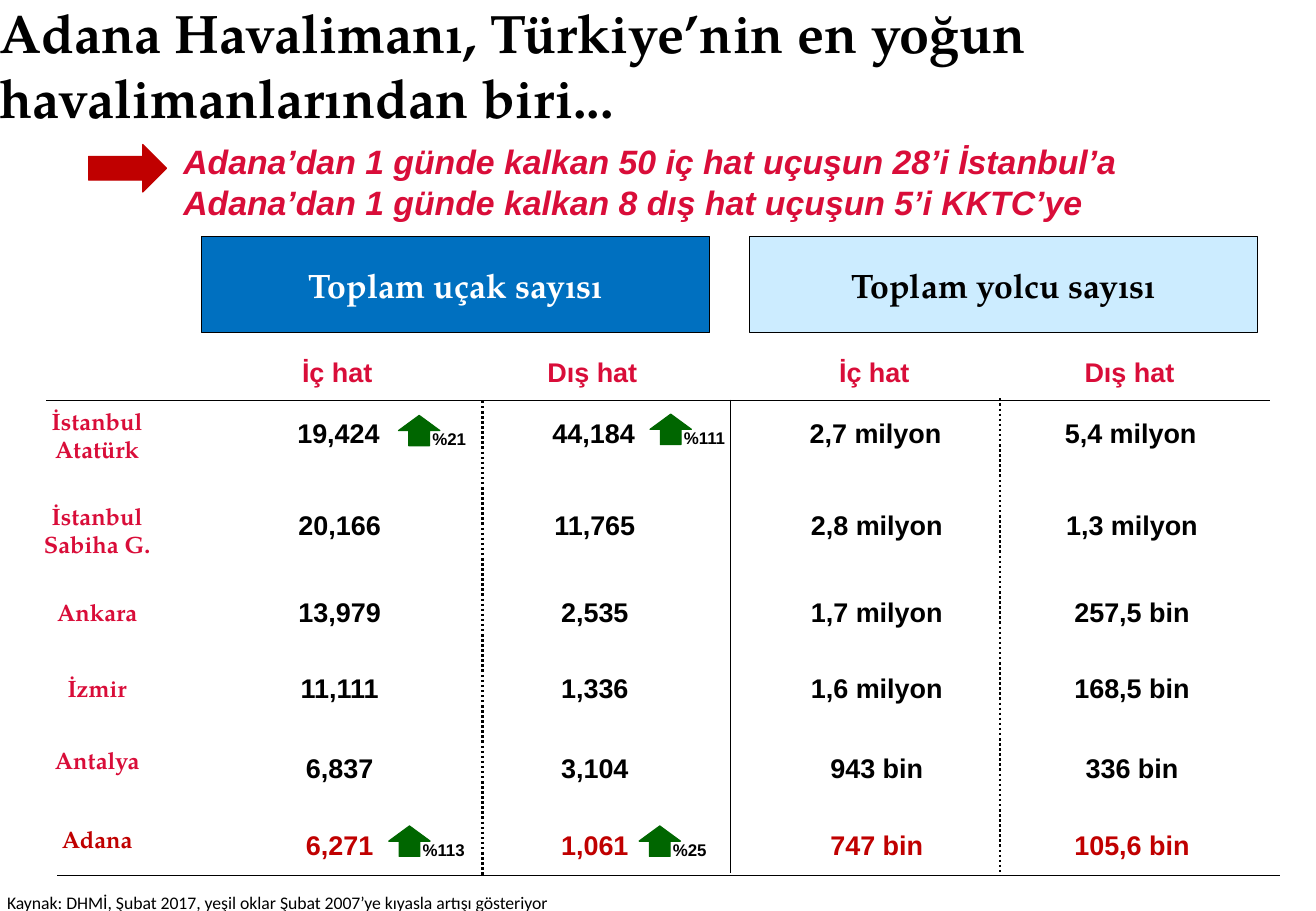
from dataclasses import dataclass

from lxml import etree
from pptx import Presentation
from pptx.dml.color import RGBColor
from pptx.enum.dml import MSO_LINE
from pptx.enum.shapes import MSO_CONNECTOR, MSO_SHAPE
from pptx.enum.text import MSO_ANCHOR, PP_ALIGN
from pptx.oxml.ns import qn
from pptx.util import Emu, Pt

PX = 9144  # one px is a hundredth of an inch
SLIDE_WIDTH, SLIDE_HEIGHT = 1083, 750

BLACK = RGBColor(0x00, 0x00, 0x00)
WHITE = RGBColor(0xFF, 0xFF, 0xFF)
CRIMSON = RGBColor(0xD9, 0x0D, 0x39)
DARK_RED = RGBColor(0xC0, 0x00, 0x00)
BLUE = RGBColor(0x00, 0x70, 0xC0)
PALE_BLUE = RGBColor(0xCC, 0xEC, 0xFF)
GREEN = RGBColor(0x00, 0x66, 0x00)

SERIF, SANS, SOURCE_FONT = "TeX Gyre Pagella", "Arial", "Calibri"

LEFT, CENTER = PP_ALIGN.LEFT, PP_ALIGN.CENTER
TOP, MIDDLE = MSO_ANCHOR.TOP, MSO_ANCHOR.MIDDLE
RECTANGLE = MSO_SHAPE.RECTANGLE
RIGHT_ARROW, UP_ARROW = MSO_SHAPE.RIGHT_ARROW, MSO_SHAPE.UP_ARROW
STRAIGHT = MSO_CONNECTOR.STRAIGHT
DOTTED = MSO_LINE.ROUND_DOT


@dataclass(frozen=True)
class Box:
    left: int
    top: int
    width: int
    height: int

    def emu(self) -> list[Emu]:
        return [Emu(n * PX) for n in (self.left, self.top, self.width, self.height)]


@dataclass(frozen=True)
class Style:
    font: str
    size: float
    color: RGBColor
    bold: bool = True
    italic: bool = False
    align: PP_ALIGN = CENTER


@dataclass(frozen=True)
class Airport:
    name: str
    label_top: int
    label_height: int
    value_top: int
    values: tuple[str, str, str, str]
    label_color: RGBColor = CRIMSON
    value_color: RGBColor = BLACK


@dataclass(frozen=True)
class Rule:
    x1: int
    y1: int
    x2: int
    y2: int
    dotted: bool = False


@dataclass(frozen=True)
class Increase:
    left: int
    top: int
    text: str


COLUMN_LEFTS = (175, 385, 617, 827)
COLUMN_WIDTH = 209
COLUMN_TITLES = ("İç hat", "Dış hat", "İç hat", "Dış hat")

GROUPS = (
    (166, "Toplam uçak sayısı", BLUE, WHITE),
    (617, "Toplam yolcu sayısı", PALE_BLUE, BLACK),
)

AIRPORTS = (
    Airport("İstanbul Atatürk", 330, 63, 338,
            ("19,424", "44,184", "2,7 milyon", "5,4 milyon")),
    Airport("İstanbul Sabiha G.", 408, 63, 414,
            ("20,166", "11,765", "2,8 milyon", "1,3 milyon")),
    Airport("Ankara", 487, 39, 485, ("13,979", "2,535", "1,7 milyon", "257,5 bin")),
    Airport("İzmir", 550, 39, 548, ("11,111", "1,336", "1,6 milyon", "168,5 bin")),
    Airport("Antalya", 609, 39, 614, ("6,837", "3,104", "943 bin", "336 bin")),
    Airport("Adana", 674, 39, 677, ("6,271", "1,061", "747 bin", "105,6 bin"),
            DARK_RED, DARK_RED),
)

RULES = (
    Rule(397, 330, 397, 721, dotted=True),
    Rule(601, 329, 601, 719),
    Rule(823, 328, 823, 720, dotted=True),
    Rule(38, 330, 1045, 330),
    Rule(47, 721, 1053, 721),
)

INCREASES = (
    Increase(328, 342, "%21"),
    Increase(535, 341, "%111"),
    Increase(320, 680, "%113"),
    Increase(526, 680, "%25"),
)


def write(shape, lines: list[str], style: Style, anchor=TOP) -> None:
    frame = shape.text_frame
    frame.word_wrap = True
    frame.vertical_anchor = anchor
    frame.text = "\n".join(lines)
    for paragraph in frame.paragraphs:
        paragraph.alignment = style.align
        font = paragraph.font
        font.name, font.size = style.font, Pt(style.size)
        font.bold, font.italic = style.bold, style.italic
        font.color.rgb = style.color


def add_text(slide, box: Box, lines: list[str], style: Style):
    shape = slide.shapes.add_textbox(*box.emu())
    write(shape, lines, style)
    return shape


def add_filled(slide, kind, box: Box, fill: RGBColor, outline: RGBColor):
    shape = slide.shapes.add_shape(kind, *box.emu())
    shape.shadow.inherit = False
    shape.fill.solid()
    shape.fill.fore_color.rgb = fill
    shape.line.color.rgb = outline
    shape.line.width = Pt(0.75)
    return shape


def add_rule(slide, rule: Rule) -> None:
    ends = [Emu(n * PX) for n in (rule.x1, rule.y1, rule.x2, rule.y2)]
    connector = slide.shapes.add_connector(STRAIGHT, *ends)
    connector.line.color.rgb = BLACK
    connector.line.width = Pt(1.5 if rule.dotted else 0.75)
    if rule.dotted:
        connector.line.dash_style = DOTTED
    etree.SubElement(connector._element.spPr, qn("a:effectLst"))


def add_airport(slide, airport: Airport) -> None:
    add_text(slide, Box(13, airport.label_top, 134, airport.label_height),
             [airport.name], Style(SERIF, 14, airport.label_color))
    for left, value in zip(COLUMN_LEFTS, airport.values):
        # The first row sits slightly left of the others
        shift = -1 if airport is AIRPORTS[0] else 0
        add_text(slide, Box(left + shift, airport.value_top, COLUMN_WIDTH, 37),
                 [value], Style(SANS, 16, airport.value_color))


def add_increase(slide, increase: Increase) -> None:
    add_filled(slide, UP_ARROW, Box(increase.left, increase.top, 34, 25), GREEN, GREEN)
    add_text(slide, Box(increase.left + 18, increase.top + 6, 66, 27),
             [increase.text], Style(SANS, 10, BLACK, align=LEFT))


def main() -> None:
    presentation = Presentation()
    presentation.slide_width = Emu(SLIDE_WIDTH * PX)
    presentation.slide_height = Emu(SLIDE_HEIGHT * PX)
    slide = presentation.slides.add_slide(presentation.slide_layouts[6])

    # Title
    title = add_text(slide, Box(0, 0, SLIDE_WIDTH, 92),
                     ["Adana Havalimanı, Türkiye’nin en yoğun havalimanlarından biri..."],
                     Style(SERIF, 32, BLACK, align=LEFT))
    frame = title.text_frame
    frame.margin_left = frame.margin_top = frame.margin_right = frame.margin_bottom = 0

    # Key message
    add_filled(slide, RIGHT_ARROW, Box(73, 119, 64, 39), DARK_RED, DARK_RED)
    add_text(slide, Box(141, 111, 942, 77),
             ["Adana’dan 1 günde kalkan 50 iç hat uçuşun 28’i İstanbul’a",
              "Adana’dan 1 günde kalkan 8 dış hat uçuşun 5’i KKTC’ye"],
             Style(SANS, 20, CRIMSON, italic=True, align=LEFT))

    # Group and column headings
    for left, heading, fill, color in GROUPS:
        banner = add_filled(slide, RECTANGLE, Box(left, 195, 418, 79), fill, BLACK)
        write(banner, [heading], Style(SERIF, 20, color), MIDDLE)
    for left, heading in zip(COLUMN_LEFTS, COLUMN_TITLES):
        add_text(slide, Box(left - 2, 288, COLUMN_WIDTH, 41), [heading],
                 Style(SANS, 16, CRIMSON))

    # Airport rows, dividing lines and growth arrows
    for airport in AIRPORTS:
        add_airport(slide, airport)
    for rule in RULES:
        add_rule(slide, rule)
    for increase in INCREASES:
        add_increase(slide, increase)

    # Source
    add_text(slide, Box(-4, 729, 785, 28),
             ["Kaynak: DHMİ, Şubat 2017, yeşil oklar Şubat 2007’ye kıyasla artışı gösteriyor"],
             Style(SOURCE_FONT, 10.5, BLACK, bold=False, align=LEFT))

    presentation.save("out.pptx")


if __name__ == "__main__":
    main()
